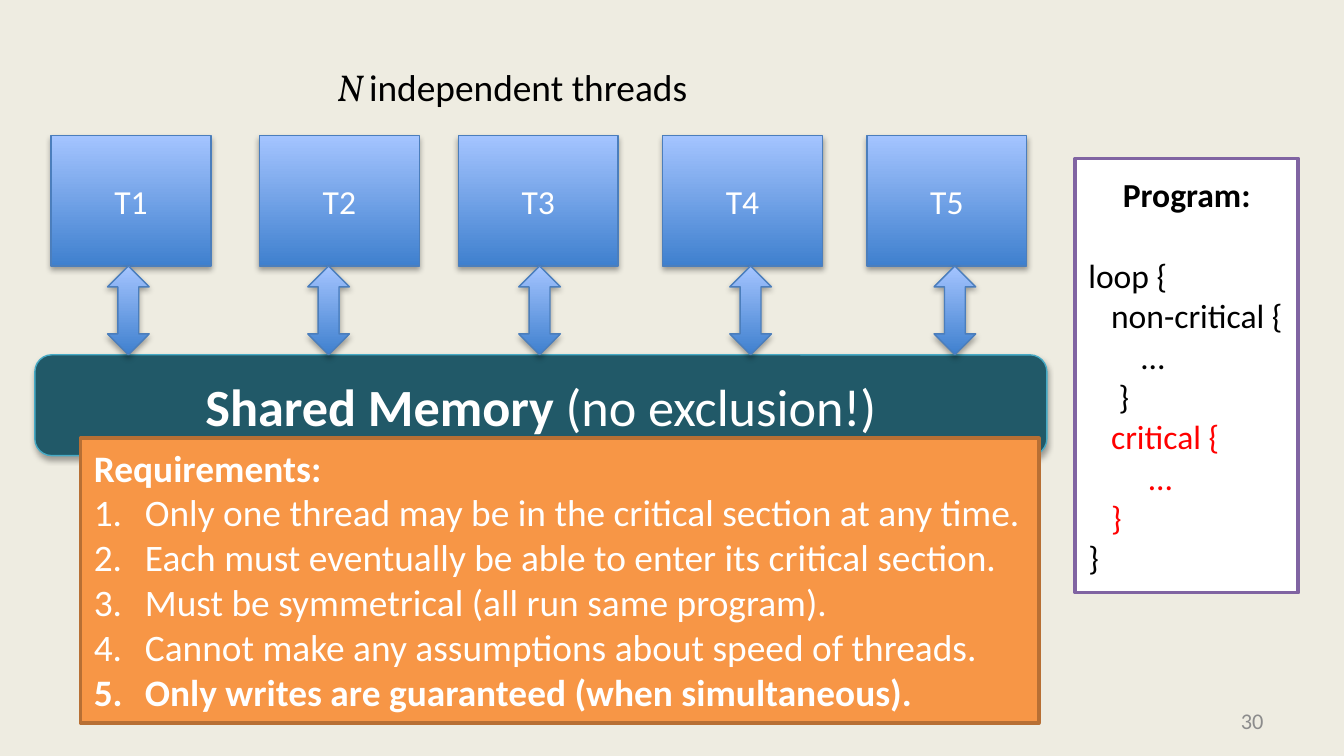
from lxml import etree
from pptx import Presentation
from pptx.dml.color import RGBColor
from pptx.enum.shapes import MSO_SHAPE
from pptx.enum.text import MSO_ANCHOR, PP_ALIGN
from pptx.oxml.ns import qn
from pptx.util import Inches, Pt

SLIDE_WIDTH = 10
SLIDE_HEIGHT = SLIDE_WIDTH * 9 / 16

THEME = {
    "background": "EEECE1", "black": "000000", "white": "FFFFFF", "gray": "8C8C8C",
    "critical": "FF0000", "thread_dark": "3F80CE", "thread_light": "A4C4FF",
    "thread_line": "4B7EBC", "memory": "215968", "memory_line": "46AAC5",
    "program_line": "8064A2", "requirements": "F79646", "requirements_line": "B76F34",
    "font": "Calibri", "math_font": "Vollkorn",
    "small": 12, "body": 18, "large": 20, "title": 28,
}

# Thread name, left of its box, left of its arrow
THREADS = [
    ("T1", 0.38, 0.8), ("T2", 1.93, 2.29), ("T3", 3.41, 3.86),
    ("T4", 4.93, 5.43), ("T5", 6.45, 6.95),
]
THREAD_TOP, THREAD_WIDTH, THREAD_HEIGHT = 1.01, 1.19, 0.97
ARROW_WIDTH, MEMORY_TOP = 0.31, 2.64

# Program line, colour
PROGRAM = [
    ("loop {", "black"),
    ("   non-critical {", "black"),
    ("       …", "black"),
    ("    }", "black"),
    ("   critical {", "critical"),
    ("        …", "critical"),
    ("   }", "critical"),
    ("}", "black"),
]
# Requirement, bold
REQUIREMENTS = [
    ("Only one thread may be in the critical section at any time.", False),
    ("Each must eventually be able to enter its critical section.", False),
    ("Must be symmetrical (all run same program).", False),
    ("Cannot make any assumptions about speed of threads.", False),
    ("Only writes are guaranteed (when simultaneous).", True),
]


def color(name):
    return RGBColor.from_string(THEME[name])


def add_run(paragraph, text, size, ink, bold=False, italic=False, font="font"):
    run = paragraph.add_run()
    run.text = text
    run.font.name = THEME[font]
    run.font.size = Pt(THEME[size])
    run.font.color.rgb = color(ink)
    run.font.bold, run.font.italic = bold, italic


def add_shadow(shape):
    effects = etree.SubElement(shape._element.spPr, qn("a:effectLst"))
    shadow = etree.SubElement(effects, qn("a:outerShdw"), blurRad="40000",
                              dist="23000", dir="5400000", rotWithShape="0")
    black = etree.SubElement(shadow, qn("a:srgbClr"), val=THEME["black"])
    etree.SubElement(black, qn("a:alpha"), val="35000")


def add_panel(slide, kind, box, fill, line, line_width, shadow=False):
    """Add an outlined shape; fill is one colour, or a bottom and a top colour."""
    panel = slide.shapes.add_shape(kind, *map(Inches, box))
    if isinstance(fill, tuple):
        panel.fill.gradient()
        panel.fill.gradient_angle = 90
        for stop, name in zip(panel.fill.gradient_stops, fill):
            stop.color.rgb = color(name)
    else:
        panel.fill.solid()
        panel.fill.fore_color.rgb = color(fill)
    panel.line.color.rgb = color(line)
    panel.line.width = Pt(line_width)
    if shadow:
        add_shadow(panel)
    else:
        panel.shadow.inherit = False
    panel.text_frame.word_wrap = True
    panel.text_frame.vertical_anchor = MSO_ANCHOR.MIDDLE
    panel.text_frame.paragraphs[0].alignment = PP_ALIGN.CENTER
    return panel


def add_thread_part(slide, kind, box):
    return add_panel(slide, kind, box, ("thread_dark", "thread_light"),
                     "thread_line", 0.75, shadow=True)


def add_threads(slide):
    heading = slide.shapes.add_textbox(*map(Inches, (2.41, 0.43, 2.9, 0.44)))
    heading.text_frame.word_wrap = False
    line = heading.text_frame.paragraphs[0]
    add_run(line, "N ", "large", "black", italic=True, font="math_font")
    add_run(line, "independent threads", "large", "black")

    memory = add_panel(slide, MSO_SHAPE.ROUNDED_RECTANGLE, (0.26, MEMORY_TOP, 7.53, 0.75),
                       "memory", "memory_line", 0.75, shadow=True)
    line = memory.text_frame.paragraphs[0]
    add_run(line, "Shared Memory ", "title", "white", bold=True)
    add_run(line, "(no exclusion!)", "title", "white")

    arrow_top = THREAD_TOP + THREAD_HEIGHT
    for name, left, arrow_left in THREADS:
        thread = add_thread_part(slide, MSO_SHAPE.RECTANGLE,
                                 (left, THREAD_TOP, THREAD_WIDTH, THREAD_HEIGHT))
        add_run(thread.text_frame.paragraphs[0], name, "body", "white")
        add_thread_part(slide, MSO_SHAPE.UP_DOWN_ARROW,
                        (arrow_left, arrow_top, ARROW_WIDTH, MEMORY_TOP - arrow_top))


def add_program(slide):
    program = add_panel(slide, MSO_SHAPE.RECTANGLE, (8, 1.18, 1.66, 3.23),
                        "white", "program_line", 2)
    frame = program.text_frame
    add_run(frame.paragraphs[0], "Program:", "body", "black", bold=True)
    for number, (text, ink) in enumerate(PROGRAM):
        line = frame.add_paragraph()
        line.alignment = PP_ALIGN.LEFT
        if number == 0:
            line.space_before = Pt(22)
        add_run(line, text, "body", ink)


def add_requirements(slide):
    requirements = add_panel(slide, MSO_SHAPE.RECTANGLE, (0.6, 3.26, 7.13, 2.12),
                             "requirements", "requirements_line", 2)
    frame = requirements.text_frame
    frame.word_wrap = False
    frame.vertical_anchor = MSO_ANCHOR.TOP
    frame.paragraphs[0].alignment = PP_ALIGN.LEFT
    add_run(frame.paragraphs[0], "Requirements:", "large", "white", bold=True)
    indent = Inches(0.38)
    for text, bold in REQUIREMENTS:
        item = frame.add_paragraph()
        item.alignment = PP_ALIGN.LEFT
        properties = item._p.get_or_add_pPr()
        properties.set("marL", str(indent))
        properties.set("indent", str(-indent))
        etree.SubElement(properties, qn("a:buFont"), typeface="+mj-lt")
        etree.SubElement(properties, qn("a:buAutoNum"), type="arabicPeriod")
        add_run(item, text, "large", "white", bold=bold)


def add_page_number(slide):
    page = slide.shapes.add_textbox(*map(Inches, (7.17, 5.21, 2.33, 0.3)))
    page.text_frame.word_wrap = True
    page.text_frame.vertical_anchor = MSO_ANCHOR.MIDDLE
    line = page.text_frame.paragraphs[0]
    line.alignment = PP_ALIGN.RIGHT
    add_run(line, "30", "small", "gray")


def main():
    deck = Presentation()
    deck.slide_width, deck.slide_height = Inches(SLIDE_WIDTH), Inches(SLIDE_HEIGHT)
    slide = deck.slides.add_slide(deck.slide_layouts[6])
    slide.background.fill.solid()
    slide.background.fill.fore_color.rgb = color("background")
    add_page_number(slide)
    add_threads(slide)
    add_program(slide)
    add_requirements(slide)
    deck.save("out.pptx")


if __name__ == "__main__":
    main()
